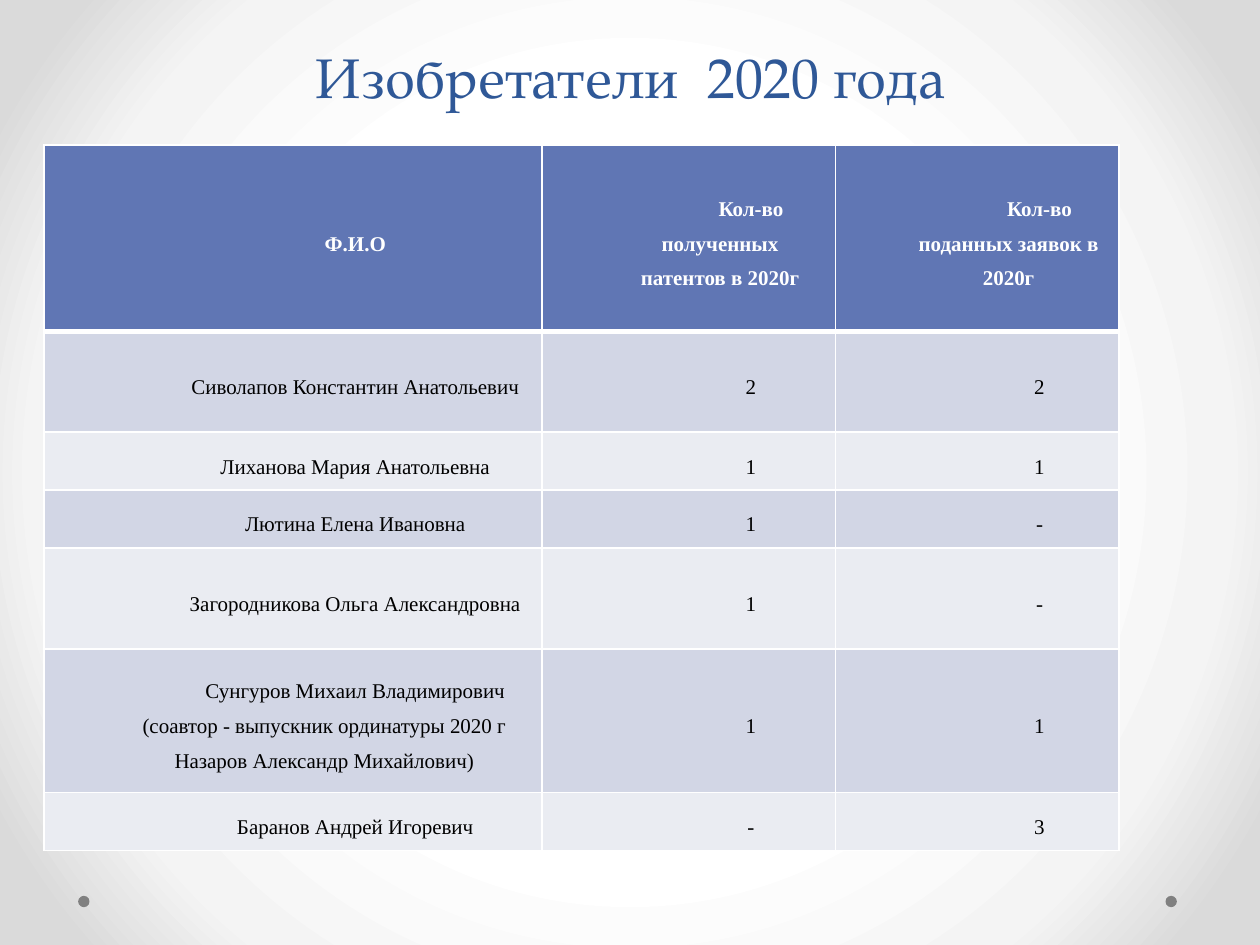
from dataclasses import dataclass

from pptx import Presentation
from pptx.dml.color import RGBColor
from pptx.enum.shapes import MSO_SHAPE as Shape
from pptx.enum.text import MSO_ANCHOR as Anchor
from pptx.enum.text import MSO_AUTO_SIZE as AutoSize
from pptx.enum.text import PP_ALIGN as Align
from pptx.oxml import parse_xml
from pptx.oxml.ns import nsdecls, qn
from pptx.util import Inches, Pt

WHITE = "FFFFFF"
HEADER_FILL = "6076B4"
BAND_FILLS = ("D2D6E5", "EAECF2")
COLUMN_WIDTHS = (3.95, 2.33, 2.25)
ROW_HEIGHTS = (1.48, 0.8, 0.46, 0.46, 0.8, 1.14, 0.46)
BACKGROUND_STOPS = ((50, WHITE), (76, "F4F4F4"), (92, "DADADA"))
DOT_LEFTS = (9.25, 0.62)


@dataclass
class Inventor:
    name: str
    patents: str
    applications: str


HEADINGS = Inventor(
    "Ф.И.О", "Кол-во полученных патентов в 2020г", "Кол-во поданных заявок в 2020г"
)
INVENTORS = (
    Inventor("Сиволапов Константин Анатольевич", "2", "2"),
    Inventor("Лиханова Мария Анатольевна", "1", "1"),
    Inventor("Лютина Елена Ивановна", "1", "-"),
    Inventor("Загородникова Ольга Александровна", "1", "-"),
    Inventor(
        "Сунгуров Михаил Владимирович (соавтор - выпускник ординатуры 2020 г "
        "Назаров Александр Михайлович)",
        "1",
        "1",
    ),
    Inventor("Баранов Андрей Игоревич", "-", "3"),
)


def color(value: str) -> RGBColor:
    return RGBColor.from_string(value)


def write_text(frame, text: str, *, font: str, size: float, fill: str,
               bold: bool = False, spacing=None):
    para = frame.paragraphs[0]
    para.alignment = Align.CENTER
    para.line_spacing = spacing
    span = para.add_run()
    span.text = text
    span.font.name = font
    span.font.size = Pt(size)
    span.font.bold = bold
    span.font.color.rgb = color(fill)
    return para


def set_background(page) -> None:
    page.background.fill.gradient()
    gradient = next(page.element.iter(qn("a:gradFill")))
    stops = "".join(
        f'<a:gs pos="{position * 1000}"><a:srgbClr val="{value}"/></a:gs>'
        for position, value in BACKGROUND_STOPS
    )
    gradient.getparent().replace(gradient, parse_xml(
        f'<a:gradFill {nsdecls("a")} rotWithShape="1"><a:gsLst>{stops}</a:gsLst>'
        '<a:path path="circle"><a:fillToRect l="50000" t="50000" r="50000" b="50000"/>'
        '</a:path></a:gradFill>'
    ))


def add_dot(page, left: float) -> None:
    dot = page.shapes.add_shape(
        Shape.OVAL, Inches(left), Inches(7.11), Inches(0.09), Inches(0.09)
    )
    dot.shadow.inherit = False
    dot.fill.solid()
    dot.fill.fore_color.rgb = color("808080")
    dot.line.fill.background()


def set_borders(cell, *, top: float = 1, bottom: float = 1) -> None:
    properties = cell._tc.get_or_add_tcPr()
    widths = {"lnL": 1, "lnR": 1, "lnT": top, "lnB": bottom}
    for index, (side, width) in enumerate(widths.items()):
        properties.insert(index, parse_xml(
            f'<a:{side} {nsdecls("a")} w="{Pt(width)}"><a:solidFill>'
            f'<a:srgbClr val="{WHITE}"/></a:solidFill></a:{side}>'
        ))


def fill_cell(cell, text: str, row: int, column: int) -> None:
    header = row == 0
    cell.vertical_anchor = Anchor.MIDDLE
    if column == 2:
        cell.margin_left = cell.margin_right = 0
        cell.margin_top = cell.margin_bottom = 0
    cell.fill.solid()
    cell.fill.fore_color.rgb = color(HEADER_FILL if header else BAND_FILLS[(row - 1) % 2])
    set_borders(cell, top=3 if row == 1 else 1, bottom=3 if header else 1)
    para = write_text(
        cell.text_frame, text, font="Times New Roman", size=12,
        fill=WHITE if header else "000000", bold=header, spacing=1.5,
    )
    indents = para._p.get_or_add_pPr()
    indents.set("marL", str(Inches(0.5)))
    indents.set("indent", str(Inches(0.49)))


def add_inventor_table(page) -> None:
    records = (HEADINGS, *INVENTORS)
    table = page.shapes.add_table(
        len(records), len(COLUMN_WIDTHS), Inches(0.35), Inches(1.15),
        Inches(sum(COLUMN_WIDTHS)), Inches(sum(ROW_HEIGHTS)),
    ).table
    for column, width in zip(table.columns, COLUMN_WIDTHS):
        column.width = Inches(width)
    for row, (record, height) in enumerate(zip(records, ROW_HEIGHTS)):
        table.rows[row].height = Inches(height)
        values = (record.name, record.patents, record.applications)
        for column, text in enumerate(values):
            fill_cell(table.cell(row, column), text, row, column)


def add_title(page, text: str) -> None:
    title = page.shapes.title
    title.left, title.top = Inches(0.28), Inches(0.13)
    title.width, title.height = Inches(9.45), Inches(0.79)
    frame = title.text_frame
    frame.auto_size = AutoSize.NONE
    frame.vertical_anchor = Anchor.BOTTOM
    write_text(frame, text, font="TeX Gyre Pagella", size=32, fill="2F5897",
               spacing=Pt(58))


def main() -> None:
    deck = Presentation()
    deck.slide_width, deck.slide_height = Inches(10), Inches(7.5)
    page = deck.slides.add_slide(deck.slide_layouts[5])
    set_background(page)
    for left in DOT_LEFTS:
        add_dot(page, left)
    add_title(page, "Изобретатели  2020 года")
    add_inventor_table(page)
    deck.save("out.pptx")


if __name__ == "__main__":
    main()
